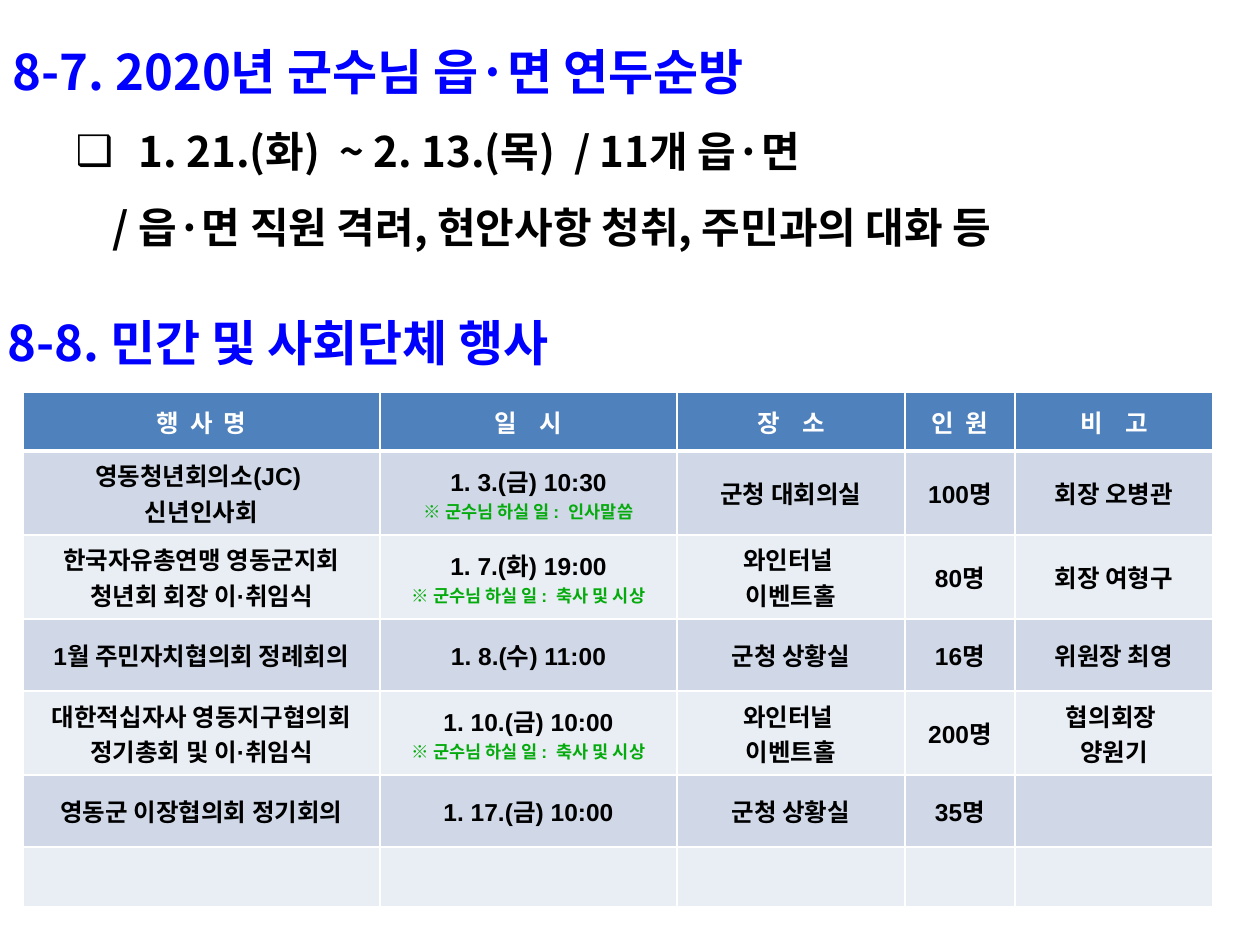
from lxml.etree import SubElement
from pptx import Presentation
from pptx.dml.color import RGBColor
from pptx.enum.text import MSO_ANCHOR, MSO_AUTO_SIZE, PP_ALIGN
from pptx.oxml.ns import qn
from pptx.util import Pt

SCALE = 914400 / 126
SANS = "Noto Sans CJK KR"
BLUE, BLACK, WHITE, GREEN = "0000FF", "000000", "FFFFFF", "05AB0D"
HEAD, BANDS = "4F81BD", ("D0D8E8", "E9EDF4")
COLS = (357, 297, 228, 110, 198)
ROWS = (59, 72, 72, 72, 72, 72, 60)
TASK = "※ 군수님 하실 일 :  "
SPEECH, AWARD = TASK + "인사말씀", TASK + "축사 및 시상"
HALL = "와인터널 \n이벤트홀"
EVENTS = (
    ("행  사  명", "일    시", "장    소", "인  원", "비    고"),
    ("영동청년회의소(JC) \n신년인사회", "1. 3.(금) 10:30\n" + SPEECH,
     "군청 대회의실", "100명", "회장 오병관"),
    ("한국자유총연맹 영동군지회\n청년회 회장 이·취임식", "1. 7.(화) 19:00\n" + AWARD,
     HALL, "80명", "회장 여형구"),
    ("1월 주민자치협의회 정례회의", "1. 8.(수) 11:00",
     "군청 상황실", "16명", "위원장 최영"),
    ("대한적십자사 영동지구협의회 정기총회 및 이·취임식", "1. 10.(금) 10:00\n" + AWARD,
     HALL, "200명", "협의회장 \n양원기"),
    ("영동군 이장협의회 정기회의", "1. 17.(금) 10:00",
     "군청 상황실", "35명", ""),
    ("",) * 5,
)


def px(n):
    return round(n * SCALE)


def color(code):
    return RGBColor.from_string(code)


def add_run(para, text, size, code, face):
    run = para.add_run()
    run.text = text
    font = run.font
    font.size, font.bold, font.name = Pt(size), True, face
    font.color.rgb = color(code)
    SubElement(font._element, qn("a:ea"), typeface=SANS)


def set_frame(holder, left, top, width, height):
    holder.left, holder.top = px(left), px(top)
    holder.width, holder.height = px(width), px(height)
    frame = holder.text_frame
    frame.word_wrap = True
    frame.auto_size = MSO_AUTO_SIZE.NONE
    frame.vertical_anchor = MSO_ANCHOR.TOP
    return frame


def set_para(para, level=0, margin=0, indent=0, bullet=None):
    para.level = level
    para.alignment = PP_ALIGN.LEFT
    para.line_spacing = 1.5
    para.space_before = Pt(0)
    props = para._p.get_or_add_pPr()
    props.set("marL", str(px(margin)))
    props.set("indent", str(px(indent)))
    if bullet:
        tint = SubElement(props, qn("a:buClr"))
        SubElement(tint, qn("a:srgbClr"), val=BLACK)
        SubElement(props, qn("a:buChar"), char=bullet)
    else:
        SubElement(props, qn("a:buNone"))


def add_tour(holder):
    frame = set_frame(holder, 0, 6, 1260, 266)
    para = frame.paragraphs[0]
    set_para(para)
    add_run(para, "8-7. 2020년 군수님 읍·면 연두순방", 28, BLUE, SANS)
    para = frame.add_paragraph()
    set_para(para, 1, 126, -63, "❑")
    add_run(para, "1. 21.(화)  ~ 2. 13.(목)  / 11개 읍·면", 24, BLACK, SANS)
    para = frame.add_paragraph()
    set_para(para, 1, 100)
    add_run(para, "/ 읍·면 직원 격려, 현안사항 청취, 주민과의 대화 등", 24, BLACK, SANS)


def add_title(holder):
    frame = set_frame(holder, -16, 277, 1260, 581)
    para = frame.paragraphs[0]
    set_para(para, margin=11)
    add_run(para, "8-8. 민간 및 사회단체 행사", 28, BLUE, SANS)


def set_edges(cell, row):
    props = cell._tc.get_or_add_tcPr()
    wide = {"T": 3 if row == 1 else 1, "B": 3 if row == 0 else 1}
    for side in "LRTB":
        line = SubElement(props, qn("a:ln" + side), w=str(Pt(wide.get(side, 1))))
        fill = SubElement(line, qn("a:solidFill"))
        SubElement(fill, qn("a:srgbClr"), val=WHITE)


def fill_cell(cell, text, row):
    set_edges(cell, row)
    cell.fill.solid()
    cell.fill.fore_color.rgb = color(BANDS[(row - 1) % 2] if row else HEAD)
    cell.vertical_anchor = MSO_ANCHOR.MIDDLE
    frame = cell.text_frame
    for i, part in enumerate(text.split("\n")):
        para = frame.add_paragraph() if i else frame.paragraphs[0]
        para.alignment = PP_ALIGN.CENTER
        if part.startswith("※"):
            add_run(para, part, 10, GREEN, "Arial")
        elif part:
            add_run(para, part, 14, BLACK if row else WHITE, "Arial")


def add_events(slide):
    shape = slide.shapes.add_table(len(ROWS), len(COLS), px(23), px(392),
                                   px(sum(COLS)), px(sum(ROWS)))
    table = shape.table
    for col, width in zip(table.columns, COLS):
        col.width = px(width)
    for r, (height, texts) in enumerate(zip(ROWS, EVENTS)):
        table.rows[r].height = px(height)
        for c, text in enumerate(texts):
            fill_cell(table.cell(r, c), text, r)


def main():
    deck = Presentation()
    deck.slide_width, deck.slide_height = px(1260), px(945)
    slide = deck.slides.add_slide(deck.slide_layouts[1])
    add_tour(slide.placeholders[1])
    add_title(slide.shapes.title)
    add_events(slide)
    deck.save("out.pptx")


if __name__ == "__main__":
    main()
